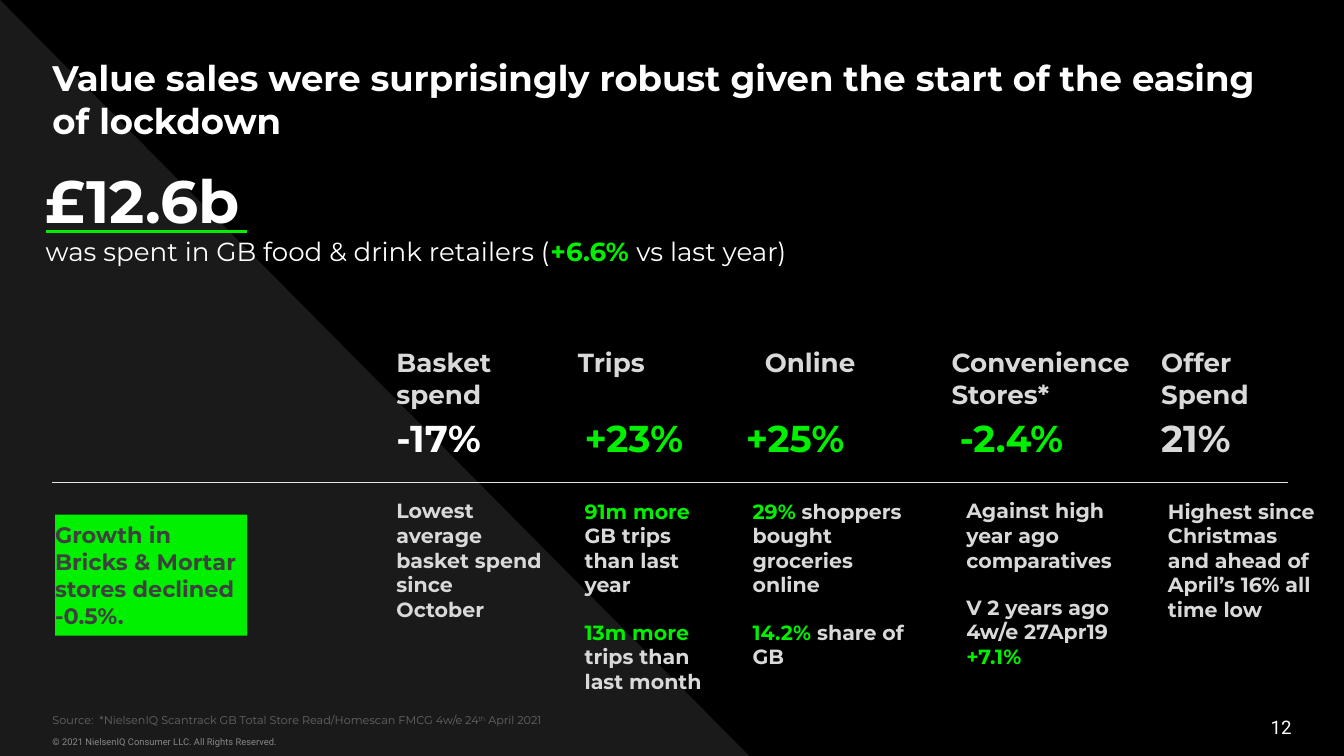
import pptx
import pptx.dml.color
import pptx.enum.shapes
import pptx.enum.text
import pptx.oxml
import pptx.oxml.ns
import pptx.util

Inches = pptx.util.Inches
Pt = pptx.util.Pt
RGBColor = pptx.dml.color.RGBColor
Align = pptx.enum.text.PP_ALIGN
Anchor = pptx.enum.text.MSO_ANCHOR
Shapes = pptx.enum.shapes.MSO_SHAPE

BLACK = RGBColor(0x00, 0x00, 0x00)
CHARCOAL = RGBColor(0x1A, 0x1A, 0x1A)
DARK_GREY = RGBColor(0x40, 0x40, 0x40)
SOURCE_GREY = RGBColor(0x66, 0x66, 0x66)
COPYRIGHT_GREY = RGBColor(0x88, 0x88, 0x88)
LIGHT_GREY = RGBColor(0xD9, 0xD9, 0xD9)
RULE_GREY = RGBColor(0xE5, 0xE5, 0xE5)
WHITE = RGBColor(0xFF, 0xFF, 0xFF)
GREEN = RGBColor(0x00, 0xF0, 0x00)

HEADING_FONT = "Montserrat"
FOOTER_FONT = "Roboto"


def set_frame(shape, margin=0.05, anchor=Anchor.TOP):
    frame = shape.text_frame
    frame.auto_size = pptx.enum.text.MSO_AUTO_SIZE.NONE
    frame.word_wrap = True
    frame.vertical_anchor = anchor
    frame.margin_left = frame.margin_right = 0
    frame.margin_top = frame.margin_bottom = Inches(margin)
    return frame


def write_paragraph(paragraph, runs, size, color=None, bold=None,
                    name=HEADING_FONT, after=0, align=Align.LEFT):
    paragraph.alignment = align
    paragraph.space_after = Pt(after)
    paragraph.font.name = name
    paragraph.font.size = Pt(size)
    if bold is not None:
        paragraph.font.bold = bold
    if color is not None:
        paragraph.font.color.rgb = color
    for text, run_color in runs:
        run = paragraph.add_run()
        run.text = text
        if run_color is not None:
            run.font.color.rgb = run_color
    return paragraph


def add_frame(slide, left, top, width, height, margin=0.05, anchor=Anchor.TOP):
    box = slide.shapes.add_textbox(Inches(left), Inches(top), Inches(width), Inches(height))
    return set_frame(box, margin, anchor)


def add_text(slide, box, text, size, color, **style):
    frame = add_frame(slide, *box)
    return write_paragraph(frame.paragraphs[0], [(text, None)], size, color, **style)


def add_rule(slide, left, top, width, color, weight):
    rule = slide.shapes.add_connector(
        pptx.enum.shapes.MSO_CONNECTOR.STRAIGHT,
        Inches(left), Inches(top), Inches(left + width), Inches(top))
    rule.line.color.rgb = color
    rule.line.width = Pt(weight)
    properties = rule._element.spPr
    properties.append(properties.makeelement(pptx.oxml.ns.qn("a:effectLst"), {}))


def add_block(slide, kind, left, top, width, height, color):
    block = slide.shapes.add_shape(
        kind, Inches(left), Inches(top), Inches(width), Inches(height))
    block.shadow.inherit = False
    block.fill.solid()
    block.fill.fore_color.rgb = color
    block.line.fill.background()
    return block


def add_backdrop(slide):
    slide.background.fill.solid()
    slide.background.fill.fore_color.rgb = BLACK
    add_block(slide, Shapes.RIGHT_TRIANGLE, 0, 0, 5.59, 5.64, CHARCOAL)


def add_footer(slide, left, top, width):
    add_text(slide, (left, top + 0.12, 5.54, 0.2),
             "© 2021 NielsenIQ Consumer LLC. All Rights Reserved.",
             5, COPYRIGHT_GREY, name=FOOTER_FONT)
    add_text(slide, (left + width - 2.25, top - 0.05, 2.25, 0.3, 0.05, Anchor.MIDDLE),
             "12", 10, WHITE, name=FOOTER_FONT, align=Align.RIGHT)
    source = add_frame(slide, left, top, 8.92, 0.2, 0.1, Anchor.BOTTOM)
    runs = [("Source:  *NielsenIQ Scantrack GB Total Store Read/Homescan FMCG 4w/e 24", None),
            ("th", None), (" April 2021", None)]
    paragraph = write_paragraph(source.paragraphs[0], runs, 6, SOURCE_GREY)
    paragraph.runs[1]._r.get_or_add_rPr().set("baseline", "30000")


def add_headline_figure(slide, left, top, width, height):
    frame = add_frame(slide, left, top, width, height)
    write_paragraph(frame.paragraphs[0], [("£12.6b", None)], 32, WHITE, bold=True)
    runs = [("was spent in GB food & drink retailers (", WHITE),
            ("+6.6% ", GREEN), ("vs last year)", WHITE)]
    paragraph = write_paragraph(frame.add_paragraph(), runs, 14)
    for run, bold in zip(paragraph.runs, (False, True, False)):
        run.font.bold = bold
    add_rule(slide, left, top + 0.55, 1.5, GREEN, 1.5)


def add_metric(slide, top, heading, figure, note):
    for (left, width, text, color), offset, size in ((heading, 0, 14), (figure, 0.51, 20)):
        add_text(slide, (left, top + offset, width, 0.33), text, size, color,
                 bold=True, after=12)
    left, width, height, paragraphs = note
    frame = add_frame(slide, left, top + 1.13, width, height)
    for index, runs in enumerate(paragraphs):
        paragraph = frame.add_paragraph() if index else frame.paragraphs[0]
        write_paragraph(paragraph, runs, 11, bold=True, after=12)


def add_growth_callout(slide, left, top, width, height):
    callout = add_block(slide, Shapes.RECTANGLE, left, top, width, height, GREEN)
    frame = set_frame(callout)
    write_paragraph(frame.paragraphs[0],
                    [("Growth in Bricks & Mortar stores declined -0.5%.", None)],
                    12, DARK_GREY, bold=True, after=12)


METRICS = [
    ((2.95, 0.75, "Basket spend", LIGHT_GREY), (2.95, 0.91, "-17%", WHITE),
     (2.95, 1.1, 0.33, [[("Lowest average basket spend since October", LIGHT_GREY)]])),
    ((4.3, 0.75, "Trips", LIGHT_GREY), (4.35, 0.91, "+23%", GREEN),
     (4.35, 1.06, 1.39, [[("91m more", GREEN), (" GB trips than last year", LIGHT_GREY)],
                         [("13m more ", GREEN), ("trips than last month", LIGHT_GREY)]])),
    ((5.69, 0.75, "Online", LIGHT_GREY), (5.55, 1, "+25%", GREEN),
     (5.6, 1.27, 0.99, [[("29%", GREEN), (" shoppers bought groceries online", LIGHT_GREY)],
                        [("14.2%", GREEN), (" share of GB", LIGHT_GREY)]])),
    ((7.08, 1.42, "Convenience Stores*", LIGHT_GREY), (7.14, 1.15, "-2.4%", GREEN),
     (7.19, 1.1, 0.33, [[("Against high year ago comparatives", LIGHT_GREY)],
                        [("V 2 years ago 4w/e 27Apr19 ", LIGHT_GREY), ("+7.1%", GREEN)]])),
    ((8.64, 0.97, "Offer Spend", LIGHT_GREY), (8.64, 0.97, "21%", LIGHT_GREY),
     (8.69, 1.15, 0.42, [[("Highest since Christmas and ahead of April’s 16% all time low",
                           LIGHT_GREY)]])),
]


def main():
    presentation = pptx.Presentation()
    presentation.slide_width = Inches(10)
    presentation.slide_height = presentation.slide_width * 9 // 16
    slide = presentation.slides.add_slide(presentation.slide_layouts[6])
    add_backdrop(slide)
    add_footer(slide, 0.39, 5.31, 9.22)
    add_text(slide, (0.39, 0.32, 9.22, 0.85, 0.1),
             "Value sales were surprisingly robust given the start of the easing of lockdown",
             19, WHITE, bold=True)
    add_rule(slide, 0.39, 3.59, 9.19, RULE_GREY, 0.75)
    for heading, figure, note in METRICS:
        add_metric(slide, 2.53, heading, figure, note)
    add_growth_callout(slide, 0.41, 3.83, 1.43, 0.9)
    add_headline_figure(slide, 0.34, 1.17, 7.4, 1.29)
    presentation.save("out.pptx")


if __name__ == "__main__":
    main()
